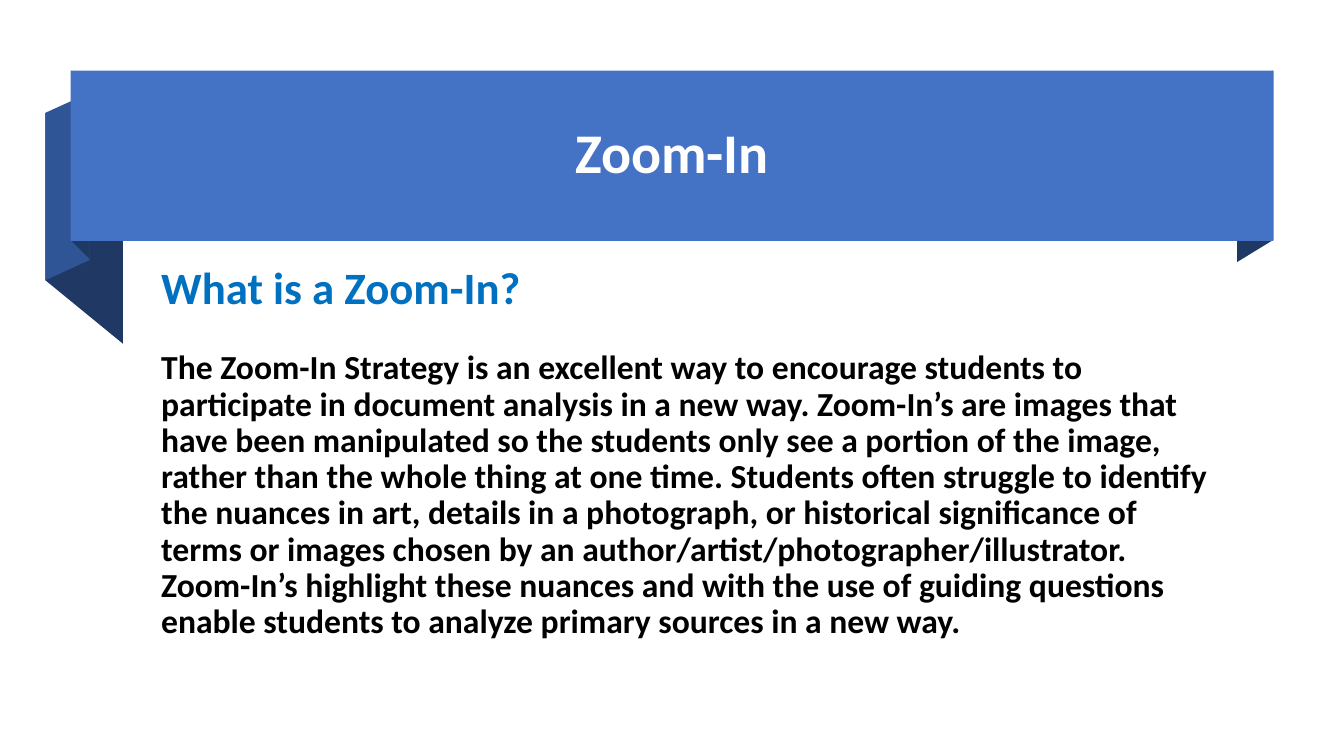
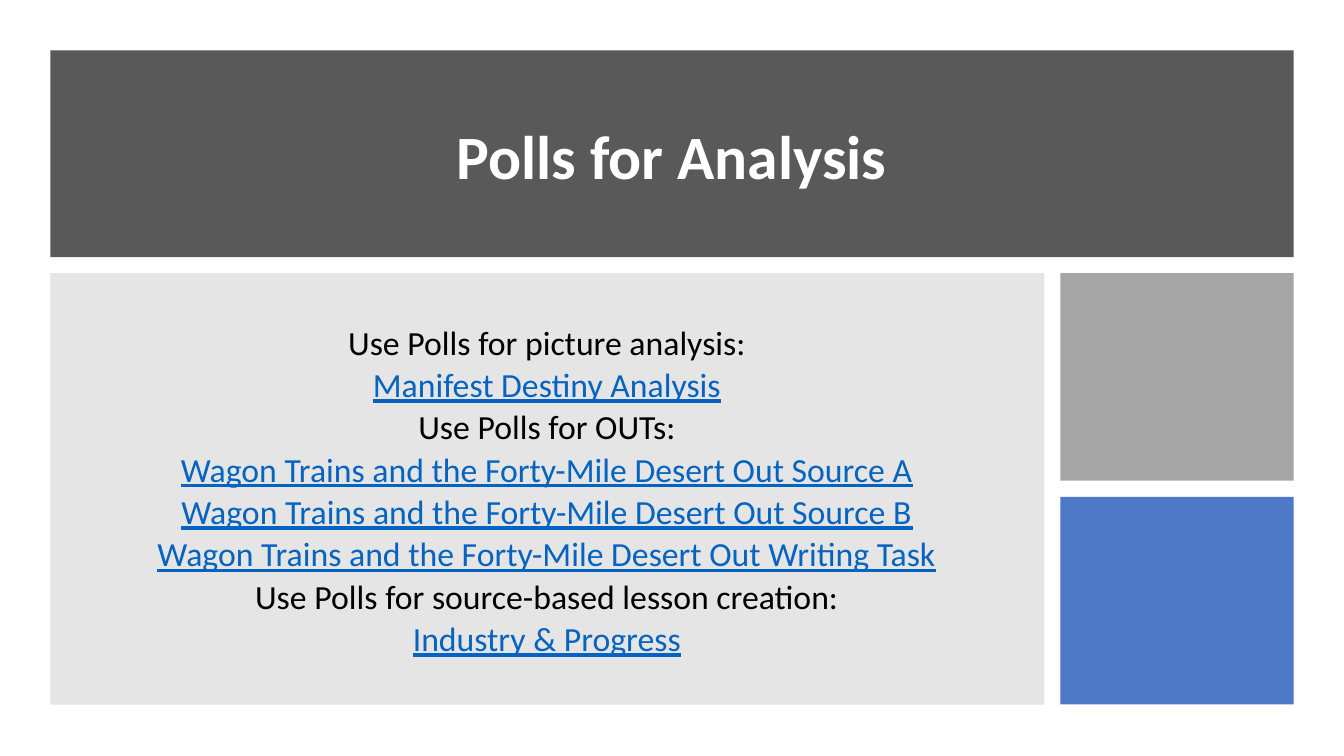
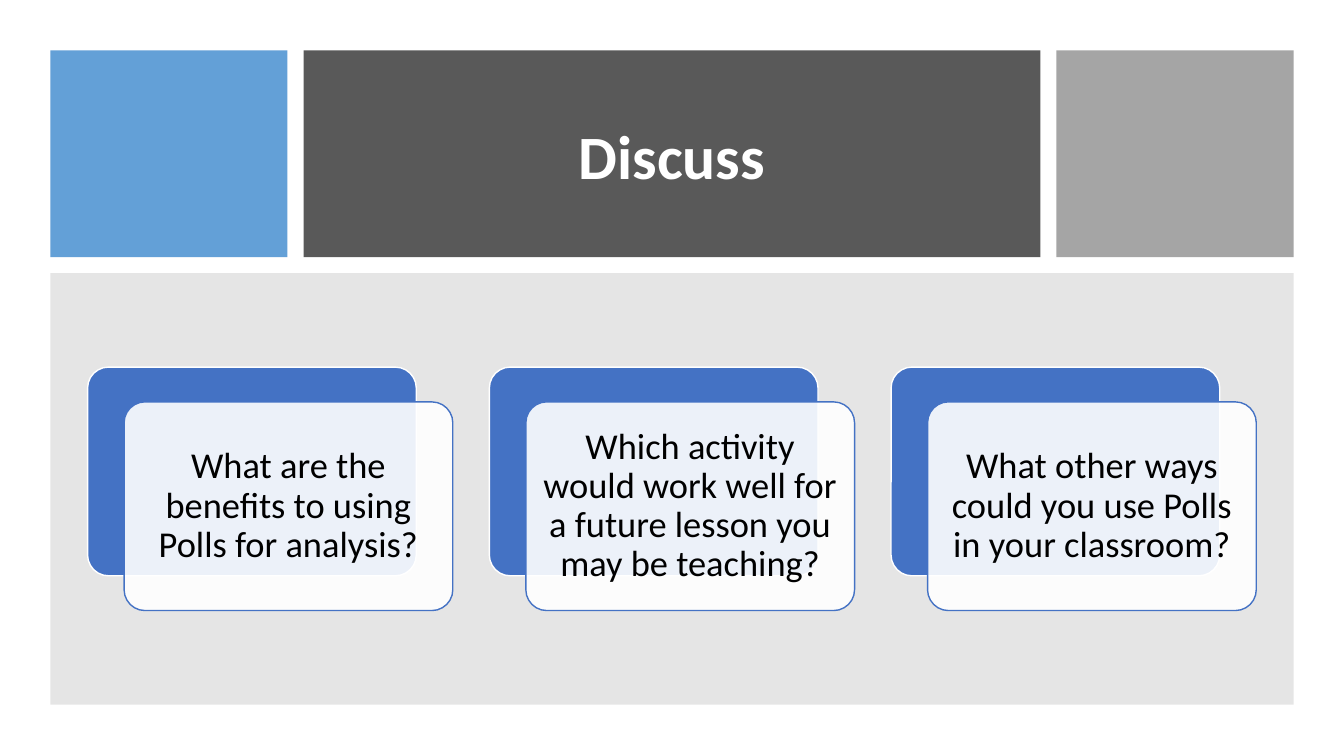
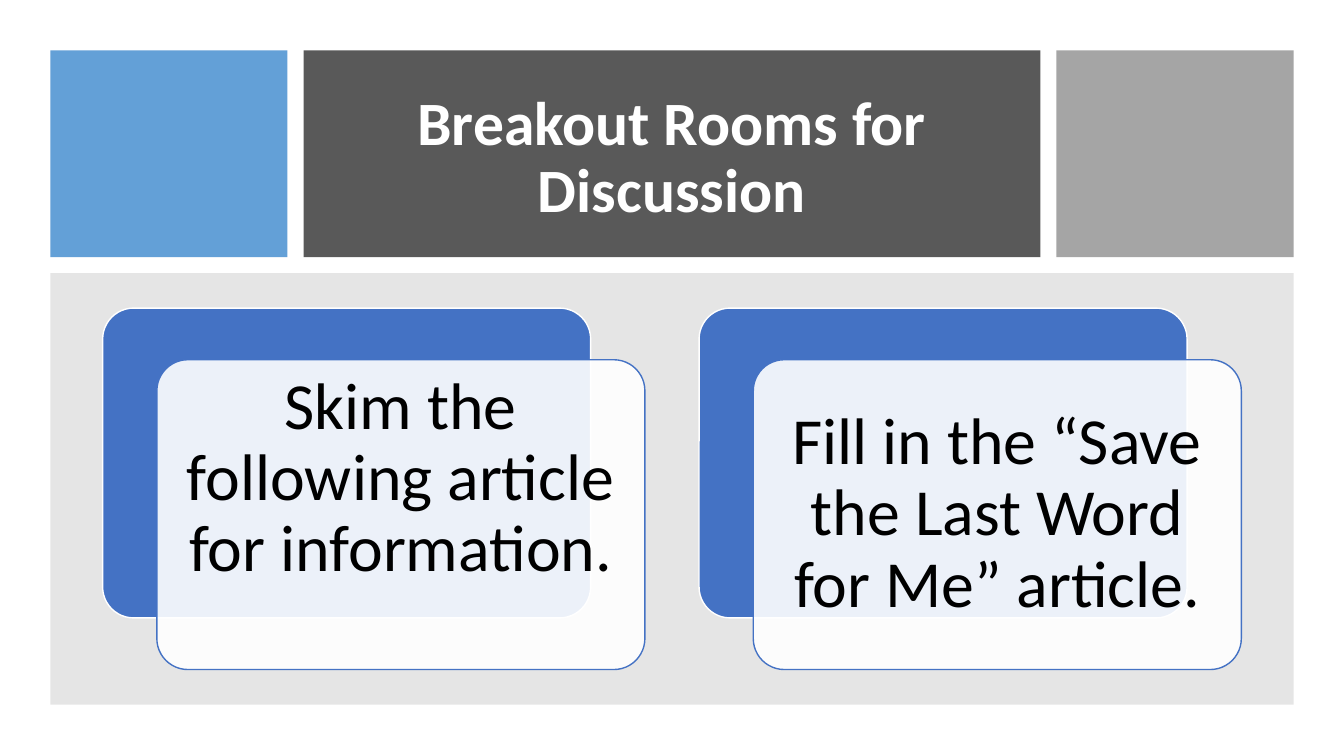
from dataclasses import dataclass

from lxml import etree
from pptx import Presentation
from pptx import util as u
from pptx.dml.color import RGBColor
from pptx.enum import shapes, text
from pptx.oxml.ns import qn


@dataclass(frozen=True)
class Theme:
    font: str = "Calibri"
    white: str = "FFFFFF"
    black: str = "000000"
    blue: str = "4472C4"
    mid_blue: str = "2F5597"
    navy: str = "203864"
    sky: str = "5B9BD5"
    heading: str = "0070C0"
    link: str = "0563C1"
    dark: str = "595959"
    grey: str = "A5A5A5"
    panel: str = "808080"
    ribbon_title: float = 40
    title: float = 44
    subtitle: float = 32
    body: float = 24
    list_item: float = 24.1
    card: float = 26
    big_card: float = 47


T = Theme()


@dataclass(frozen=True)
class Box:
    x: float
    y: float
    w: float
    h: float

    def emu(self):
        return [u.Inches(v) for v in (self.x, self.y, self.w, self.h)]

    def inset(self, dx, top, bottom):
        return Box(self.x + dx, self.y + top, self.w - 2 * dx, self.h - top - bottom)

    def columns(self, shares, gap):
        unit = (self.w - gap * (len(shares) - 1)) / sum(shares)
        x, boxes = self.x, []
        for share in shares:
            boxes.append(Box(x, self.y, share * unit, self.h))
            x += share * unit + gap
        return boxes

    def rows(self, shares, gap):
        turned = Box(self.y, self.x, self.h, self.w)
        return [Box(b.y, b.x, b.h, b.w) for b in turned.columns(shares, gap)]


GAP = 0.16
HEADER, CONTENT = Box(0.5, 0.5, 12.33, 6.49).rows((2.05, 4.28), GAP)
RIBBON = Box(0.7, 0.7, 11.93, 1.69)


def color(value):
    return RGBColor.from_string(value)


def paint(sp, fill, opacity=100, line=None):
    sp.shadow.inherit = False
    sp.fill.solid()
    sp.fill.fore_color.rgb = color(fill)
    if opacity < 100:
        clr = sp.element.find(".//" + qn("a:srgbClr"))
        etree.SubElement(clr, qn("a:alpha")).set("val", str(opacity * 1000))
    if line:
        sp.line.color.rgb = color(line)
        sp.line.width = u.Pt(1)
    else:
        sp.line.fill.background()


def add_block(s, box, fill, opacity=100):
    sp = s.shapes.add_shape(shapes.MSO_SHAPE.RECTANGLE, *box.emu())
    paint(sp, fill, opacity)


def add_fold(s, points, fill):
    pts = [(u.Inches(x), u.Inches(y)) for x, y in points]
    builder = s.shapes.build_freeform(*pts[0])
    builder.add_line_segments(pts[1:], close=True)
    paint(builder.convert_to_shape(), fill)


def setup_frame(sp, anchor=text.MSO_ANCHOR.MIDDLE):
    tf = sp.text_frame
    tf.word_wrap = True
    tf.auto_size = text.MSO_AUTO_SIZE.NONE
    tf.vertical_anchor = anchor
    return tf


def write(p, content, size, fill=T.black, bold=False, underline=False,
          align=text.PP_ALIGN.CENTER, spacing=0.9, before=0):
    p.alignment = align
    p.line_spacing = spacing
    p.space_before = u.Pt(before)
    r = p.add_run()
    r.text = content
    r.font.name = T.font
    r.font.size = u.Pt(size)
    r.font.bold = bold
    r.font.underline = underline
    r.font.color.rgb = color(fill)


def set_title(s, box, content, size=T.title):
    sp = s.shapes.title
    sp.left, sp.top, sp.width, sp.height = box.emu()
    write(setup_frame(sp).paragraphs[0], content, size, T.white, bold=True)
    sp.element.getparent().append(sp.element)


def add_text(s, box, lines, anchor=text.MSO_ANCHOR.MIDDLE):
    tf = setup_frame(s.shapes.add_textbox(*box.emu()), anchor)
    for i, (content, style) in enumerate(lines):
        p = tf.add_paragraph() if i else tf.paragraphs[0]
        write(p, content, **style)


def add_card(s, box, fill, line, opacity=100):
    sp = s.shapes.add_shape(shapes.MSO_SHAPE.ROUNDED_RECTANGLE, *box.emu())
    sp.adjustments[0] = 0.1
    paint(sp, fill, opacity, line)
    return sp


def add_cards(s, items, width, size, inset):
    height = width * 0.635
    dx, dy = width / 9, height / 6
    pitch = width + 2 * dx
    left = CONTENT.x + (CONTENT.w - pitch * len(items) + dx) / 2
    top = CONTENT.y + (CONTENT.h - height - dy) / 2
    for i, (content, rise) in enumerate(items):
        x = left + i * pitch
        add_card(s, Box(x, top, width, height), T.blue, T.white)
        front = add_card(s, Box(x + dx, top + dy, width, height), T.white, T.blue, 90)
        tf = setup_frame(front)
        tf.margin_left = tf.margin_right = u.Inches(inset)
        tf.margin_top, tf.margin_bottom = 0, u.Inches(2 * rise)
        write(tf.paragraphs[0], content, size)


def new_slide(prs):
    return prs.slides.add_slide(prs.slide_layouts[5])


def ribbon_slide(prs, title, heading, body):
    s = new_slide(prs)
    add_fold(s, [(1.22, 3.41), (0.45, 2.78), (0.45, 1.12), (1.22, 1.75)], T.navy)
    add_fold(s, [(0.89, 2.58), (0.45, 2.78), (0.45, 1.12), (0.89, 0.92)], T.mid_blue)
    add_fold(s, [(0.89, 2.57), (0.71, 2.39), (0.71, 0.7), (0.89, 0.89)], T.navy)
    add_fold(s, [(12.63, 2.38), (12.27, 2.6), (12.27, 0.91), (12.63, 0.7)], T.navy)
    add_block(s, RIBBON, T.blue)
    set_title(s, RIBBON.inset(0.35, 0.18, 0.18), title, T.ribbon_title)
    left = dict(bold=True, align=text.PP_ALIGN.LEFT)
    add_text(s, Box(1.5, 2.59, 10.62, 4), [
        (heading, dict(size=T.subtitle, fill=T.heading, **left)),
        (body, dict(size=T.body, before=26, **left)),
    ], text.MSO_ANCHOR.TOP)


def links_slide(prs, title, lines):
    s = new_slide(prs)
    main_panel, side = CONTENT.columns((9.85, 2.31), GAP)
    upper, lower = side.rows((1, 1), GAP)
    add_block(s, HEADER, T.dark)
    add_block(s, main_panel, T.panel, 20)
    add_block(s, upper, T.grey)
    add_block(s, lower, T.blue, 95)
    set_title(s, HEADER.inset(0.33, 0.3, 0.19), title)
    plain = dict(size=T.list_item, spacing=0.7, before=10)
    linked = dict(plain, fill=T.link, underline=True)
    add_text(s, Box(0.85, 3.11, 9.15, 3.6),
             [(content, linked if is_link else plain) for content, is_link in lines])


def cards_slide(prs, title, items, width, size, inset):
    s = new_slide(prs)
    left, middle, right = HEADER.columns((2.35, 7.3, 2.35), GAP)
    add_block(s, left, T.sky, 95)
    add_block(s, middle, T.dark)
    add_block(s, right, T.grey)
    add_block(s, CONTENT, T.panel, 20)
    set_title(s, middle.inset(0.32, 0.3, 0.19), title)
    add_cards(s, items, width, size, inset)


def main():
    prs = Presentation()
    prs.slide_width, prs.slide_height = u.Inches(13.33), u.Inches(7.5)
    ribbon_slide(
        prs, "Zoom-In", "What is a Zoom-In?",
        "The Zoom-In Strategy is an excellent way to encourage students to "
        "participate in document analysis in a new way. Zoom-In’s are images "
        "that have been manipulated so the students only see a portion of the "
        "image, rather than the whole thing at one time. Students often "
        "struggle to identify the nuances in art, details in a photograph, or "
        "historical significance of terms or images chosen by an "
        "author/artist/photographer/illustrator. Zoom-In’s highlight these "
        "nuances and with the use of guiding questions enable students to "
        "analyze primary sources in a new way.")
    links_slide(prs, "Polls for Analysis", [
        ("Use Polls for picture analysis:", False),
        ("Manifest Destiny Analysis", True),
        ("Use Polls for OUTs:", False),
        ("Wagon Trains and the Forty-Mile Desert Out Source A", True),
        ("Wagon Trains and the Forty-Mile Desert Out Source B", True),
        ("Wagon Trains and the Forty-Mile Desert Out Writing Task", True),
        ("Use Polls for source-based lesson creation:", False),
        ("Industry & Progress", True),
    ])
    cards_slide(prs, "Discuss", [
        ("What are the benefits to using Polls for analysis?", 0),
        ("Which activity would work well for a future lesson you may be teaching?", 0),
        ("What other ways could you use Polls in your classroom?", 0),
    ], 3.26, T.card, 0.11)
    cards_slide(prs, "Breakout Rooms for Discussion", [
        ("Skim the following article for information.", 0.35),
        ("Fill in the “Save the Last Word for Me” article.", 0),
    ], 4.84, T.big_card, 0.2)
    prs.save("out.pptx")


if __name__ == "__main__":
    main()
